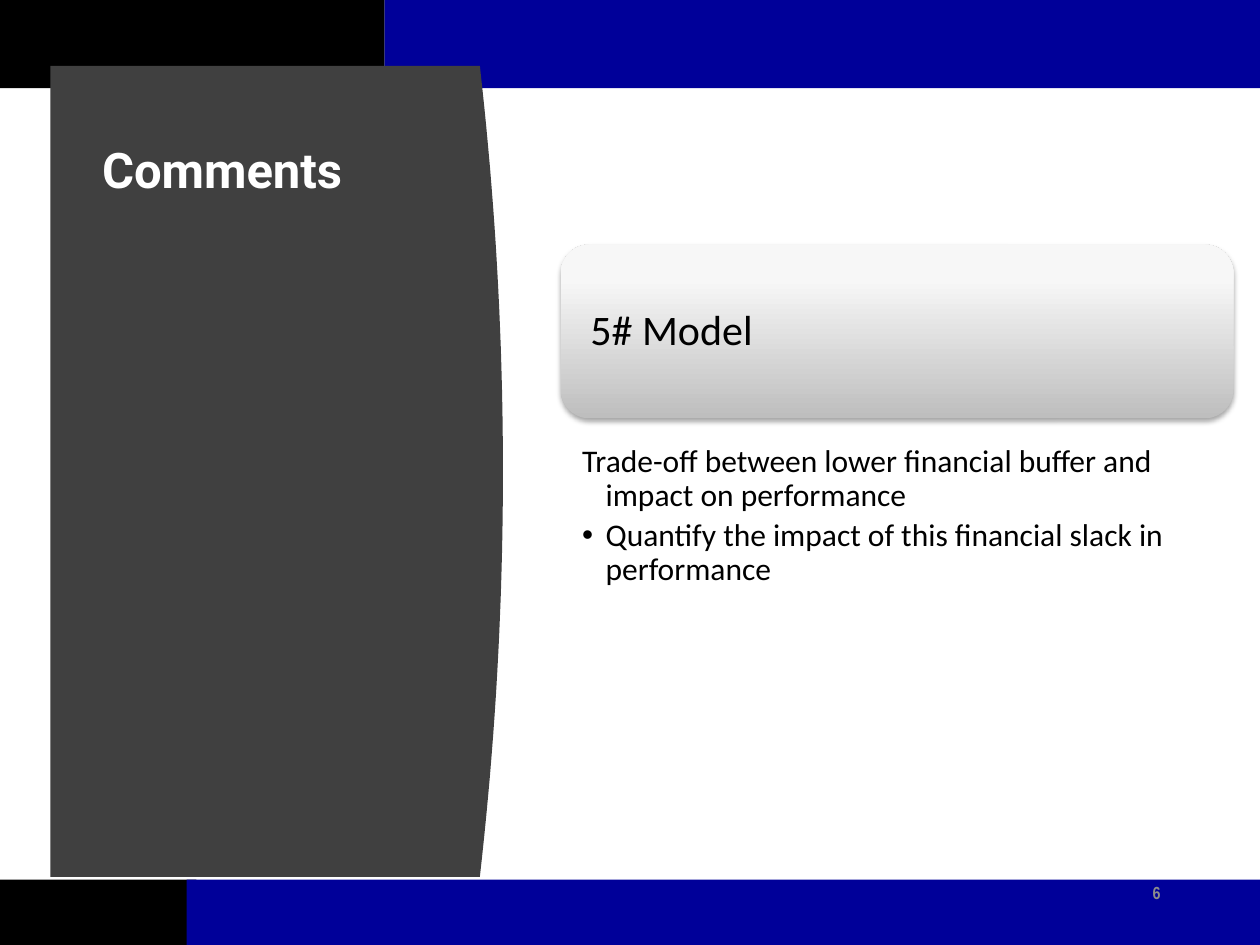
from lxml.etree import SubElement as Sub
from pptx import Presentation
from pptx.dml.color import RGBColor as RGB
from pptx.enum.shapes import MSO_SHAPE as Shape
from pptx.enum.text import MSO_ANCHOR as Anchor, MSO_AUTO_SIZE as Fit, PP_ALIGN as Align
from pptx.oxml import parse_xml
from pptx.oxml.ns import nsdecls, qn
from pptx.util import Pt

TITLE, CARD, PAGE = "Comments", "5# Model", "6"
POINTS = [
    ("Trade-off between lower financial buffer and impact on performance", False),
    ("Quantify the impact of this financial slack in performance", True),
]
THEME = {
    "black": "000000", "blue": "000099", "panel": "404040",
    "white": "FFFFFF", "grey": "8C8C8C",
    "card": [(0, "BEBEBE"), (80, "F7F7F7"), (100, "F8F8F8")],
    "title": ("Roboto", 28), "head": ("Calibri", 24),
    "body": ("Calibri", 18), "page": ("Arial Narrow", 10),
}
# left, top, width, height, colour
BANDS = [
    (0, 502.6, 112.3, 37.4, "black"),
    (106.6, 502.6, 613.4, 37.4, "blue"),
    (219.6, 0, 500.4, 50.4, "blue"),
    (0, 0, 219.6, 50.4, "black"),
]
PANEL = {"left": 28.8, "top": 37.6, "right": 274.2, "low": 501.1, "bulge": 13.2}
STEPS = 40


def place(shape, left, top, width, height):
    shape.left, shape.top = Pt(left), Pt(top)
    shape.width, shape.height = Pt(width), Pt(height)


def paint(shape, color):
    shape.shadow.inherit = False
    shape.fill.solid()
    shape.fill.fore_color.rgb = RGB.from_string(THEME[color])
    shape.line.fill.background()


def frame(shape, insets, anchor=Anchor.TOP):
    box = shape.text_frame
    box.word_wrap, box.auto_size, box.vertical_anchor = True, Fit.NONE, anchor
    sides = [Pt(n) for n in insets]
    box.margin_left, box.margin_top, box.margin_right, box.margin_bottom = sides
    return box


def write(para, text, style, color="black", bold=False, lines=0.9, after=0, align=Align.LEFT):
    para.alignment, para.line_spacing = align, lines
    para.space_before, para.space_after = Pt(0), Pt(after)
    run = para.add_run()
    run.text = text
    name, size = THEME[style]
    run.font.name, run.font.size, run.font.bold = name, Pt(size), bold
    run.font.color.rgb = RGB.from_string(THEME[color])


def hang(para, mark):
    """Set a hanging indent, with or without a bullet."""
    props = para._p.get_or_add_pPr()
    props.set("marL", str(Pt(13.5)))
    props.set("indent", str(Pt(-13.5)))
    if mark:
        Sub(props, qn("a:buFont"), typeface="Arial")
        Sub(props, qn("a:buChar"), char="•")
    else:
        Sub(props, qn("a:buNone"))


def add_panel(shapes):
    """Draw the dark panel, whose right edge bows out as a parabola."""
    left, top, right, low, bulge = PANEL.values()
    edge = []
    for i in range(STEPS + 1):
        u = 2 * i / STEPS - 1
        edge.append((Pt(right + bulge * (1 - u * u)), Pt(top + (low - top) * i / STEPS)))
    pen = shapes.build_freeform(Pt(left), Pt(top))
    pen.add_line_segments(edge + [(Pt(left), Pt(low))], close=True)
    paint(pen.convert_to_shape(), "panel")


def add_card(shapes):
    card = shapes.add_shape(Shape.ROUNDED_RECTANGLE, Pt(320.4), Pt(139.7), Pt(384.5), Pt(99.4))
    paint(card, "white")
    props = card._element.spPr
    stops = "".join(f'<a:gs pos="{at * 1000}"><a:srgbClr val="{color}"/></a:gs>'
                    for at, color in THEME["card"])
    grad = parse_xml(f'<a:gradFill {nsdecls("a")} rotWithShape="1"><a:gsLst>{stops}</a:gsLst>'
                     '<a:lin ang="16200000" scaled="0"/></a:gradFill>')
    props.replace(props.find(qn("a:solidFill")), grad)
    glow = Sub(props.find(qn("a:effectLst")), qn("a:outerShdw"), blurRad=str(Pt(3.1)),
               dist=str(Pt(1.8)), dir="5400000", rotWithShape="0")
    tint = Sub(glow, qn("a:srgbClr"), val=THEME["black"])
    Sub(tint, qn("a:alpha"), val="35000")
    box = frame(card, (12.2, 12.2, 12.2, 12.2), Anchor.MIDDLE)
    write(box.paragraphs[0], CARD, "head")


def main():
    deck = Presentation()
    deck.slide_width, deck.slide_height = Pt(720), Pt(540)
    slide = deck.slides.add_slide(deck.slide_layouts[1])
    shapes = slide.shapes
    title, body = shapes.title, slide.placeholders[1]

    for *area, color in BANDS:
        paint(shapes.add_shape(Shape.RECTANGLE, *map(Pt, area)), color)
    add_panel(shapes)

    place(title, 51.1, 79.9, 201.6, 377.3)
    box = frame(title, (7.2, 3.6, 7.2, 3.6))
    write(box.paragraphs[0], TITLE, "title", "white", bold=True)

    page = shapes.add_textbox(Pt(633.6), Pt(500.4), Pt(36.7), Pt(28.8))
    box = frame(page, (7.2, 3.6, 7.2, 3.6))
    write(box.paragraphs[0], PAGE, "page", "grey", bold=True, lines=1.0, align=Align.RIGHT)

    add_card(shapes)

    place(body, 320.4, 252, 384.5, 90)
    box = frame(body, (12.2, 2.2, 10.1, 2.2))
    for i, (text, mark) in enumerate(POINTS):
        para = box.add_paragraph() if i else box.paragraphs[0]
        write(para, text, "body", after=3.6)
        hang(para, mark)

    # Placeholders are made first, so bring them above the panel.
    for item in (title, body):
        shapes._spTree.append(item._element)
    deck.save("out.pptx")


if __name__ == "__main__":
    main()
